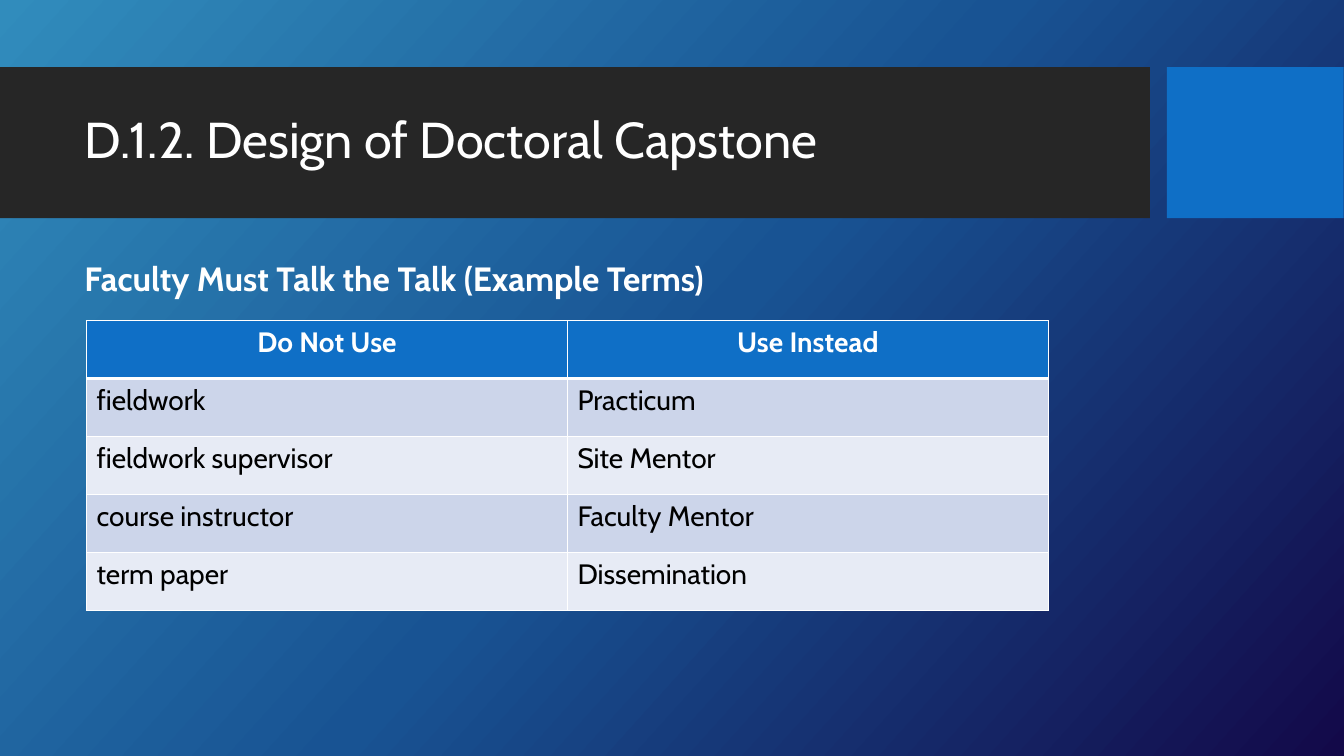
from dataclasses import dataclass

from lxml.etree import SubElement
from pptx import Presentation
from pptx.dml.color import RGBColor
from pptx.enum.shapes import MSO_SHAPE as ShapeKind
from pptx.enum.text import MSO_ANCHOR as Anchor, PP_ALIGN as Align
from pptx.oxml.ns import qn
from pptx.slide import Slide
from pptx.table import _Cell as Cell
from pptx.text.text import _Paragraph as Paragraph
from pptx.util import Cm, Pt

FONT = "Cabin"
COLOURS = {
    "sky": "318CBC",
    "ocean": "185393",
    "midnight": "130949",
    "charcoal": "262626",
    "accent": "0F6FC6",
    "white": "FFFFFF",
    "black": "000000",
    "odd_row": "CCD5EA",
    "even_row": "E7EBF5",
}
GRADIENT = [(0, "sky"), (50, "ocean"), (100, "midnight")]
GRADIENT_ANGLE = 42
TERMS = [
    ("Do Not Use", "Use Instead"),
    ("fieldwork", "Practicum"),
    ("fieldwork supervisor", "Site Mentor"),
    ("course instructor", "Faculty Mentor"),
    ("term paper", "Dissemination"),
]
COLUMN_WIDTH = 12.12
ROW_HEIGHT = 1.46


@dataclass
class Block:
    left: float
    width: float
    colour: str
    top: float = 1.69
    height: float = 3.81


@dataclass
class Label:
    text: str
    top: float
    height: float
    size: int
    bold: bool
    anchor: Anchor


BLOCKS = [Block(0, 28.98, "charcoal"), Block(29.41, 4.45, "accent")]
LABELS = [
    Label("D.1.2. Design of Doctoral Capstone", 2.08, 3, 36, False, Anchor.MIDDLE),
    Label("Faculty Must Talk the Talk (Example Terms)", 6.5, 10, 24, True, Anchor.TOP),
]


def rgb(name: str) -> RGBColor:
    return RGBColor.from_string(COLOURS[name])


def paint_background(slide: Slide) -> None:
    fill = slide.background.fill
    fill.gradient()
    fill.gradient_angle = 360 - GRADIENT_ANGLE
    stops = next(slide.element.iter(qn("a:gsLst")))
    for stop in list(stops):
        stops.remove(stop)
    for percent, name in GRADIENT:
        stop = SubElement(stops, qn("a:gs"), pos=str(percent * 1000))
        SubElement(stop, qn("a:srgbClr"), val=COLOURS[name])


def format_runs(paragraph: Paragraph, size: int, bold: bool, colour: str) -> None:
    for run in paragraph.runs:
        run.font.name = FONT
        run.font.size = Pt(size)
        run.font.bold = bold
        run.font.color.rgb = rgb(colour)


def draw_block(slide: Slide, block: Block) -> None:
    shape = slide.shapes.add_shape(
        ShapeKind.RECTANGLE,
        Cm(block.left), Cm(block.top), Cm(block.width), Cm(block.height),
    )
    shape.shadow.inherit = False
    shape.fill.solid()
    shape.fill.fore_color.rgb = rgb(block.colour)
    shape.line.fill.background()


def draw_label(slide: Slide, label: Label) -> None:
    shape = slide.shapes.add_textbox(
        Cm(1.88), Cm(label.top), Cm(26.7), Cm(label.height)
    )
    text_frame = shape.text_frame
    text_frame.word_wrap = True
    text_frame.vertical_anchor = label.anchor
    text_frame.text = label.text
    paragraph = text_frame.paragraphs[0]
    paragraph.line_spacing = 0.9
    format_runs(paragraph, label.size, label.bold, "white")


def draw_borders(cell: Cell, top: int, bottom: int) -> None:
    properties = cell._tc.get_or_add_tcPr()
    for side, points in {"L": 1, "R": 1, "T": top, "B": bottom}.items():
        line = SubElement(properties, qn(f"a:ln{side}"), w=str(Pt(points)))
        fill = SubElement(line, qn("a:solidFill"))
        SubElement(fill, qn("a:srgbClr"), val=COLOURS["white"])


def draw_terms(slide: Slide) -> None:
    row_count, column_count = len(TERMS), len(TERMS[0])
    table = slide.shapes.add_table(
        row_count, column_count, Cm(2.18), Cm(8.08),
        Cm(COLUMN_WIDTH * column_count), Cm(ROW_HEIGHT * row_count),
    ).table
    for row_index, terms in enumerate(TERMS):
        table.rows[row_index].height = Cm(ROW_HEIGHT)
        is_header = row_index == 0
        band = "odd_row" if row_index % 2 else "even_row"
        for column_index, term in enumerate(terms):
            cell = table.cell(row_index, column_index)
            draw_borders(cell, 3 if row_index == 1 else 1, 3 if is_header else 1)
            cell.fill.solid()
            cell.fill.fore_color.rgb = rgb("accent" if is_header else band)
            cell.text_frame.text = term
            paragraph = cell.text_frame.paragraphs[0]
            paragraph.alignment = Align.CENTER if is_header else Align.LEFT
            format_runs(paragraph, 20, is_header, "white" if is_header else "black")


def main() -> None:
    presentation = Presentation()
    presentation.slide_width = Cm(33.87)
    presentation.slide_height = Cm(19.05)
    slide = presentation.slides.add_slide(presentation.slide_layouts[6])
    paint_background(slide)
    for block in BLOCKS:
        draw_block(slide, block)
    for label in LABELS:
        draw_label(slide, label)
    draw_terms(slide)
    presentation.save("out.pptx")


if __name__ == "__main__":
    main()
